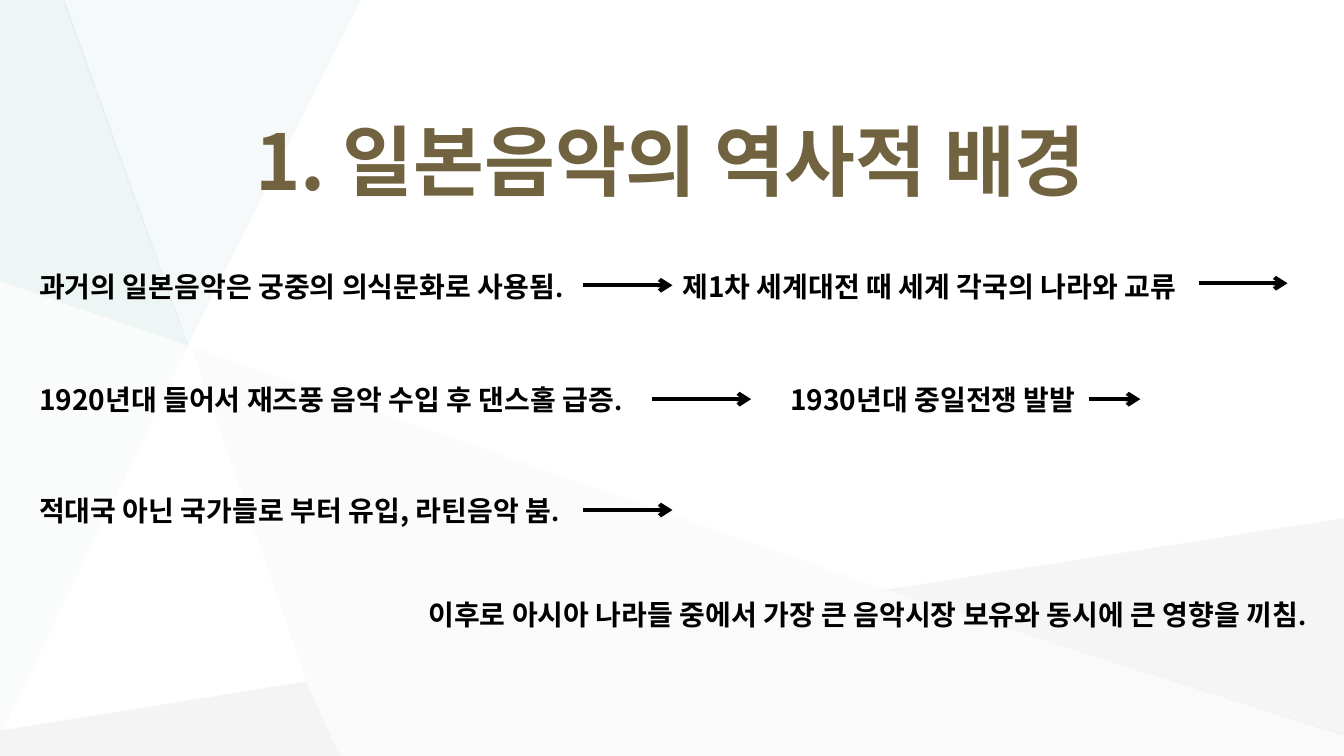
from lxml import etree
from pptx import Presentation
from pptx.dml.color import RGBColor
from pptx.enum.shapes import MSO_CONNECTOR
from pptx.enum.text import MSO_ANCHOR, MSO_AUTO_SIZE, PP_ALIGN
from pptx.oxml.ns import qn
from pptx.util import Inches, Pt

STRAIGHT = MSO_CONNECTOR.STRAIGHT
MIDDLE = MSO_ANCHOR.MIDDLE
GROW = MSO_AUTO_SIZE.SHAPE_TO_FIT_TEXT
LEFT, CENTER = PP_ALIGN.LEFT, PP_ALIGN.CENTER

FONT = "Noto Sans CJK KR"
BLACK, BROWN = "000000", "716340"

# Background facets: colour, opacity in percent, corners
FACETS = [
    ("F3F2F2", 26, [(1.9, 3.44), (3.04, 6.76), (8.79, 5.85)]),
    ("B6B8BA", 15, [(3.04, 6.76), (0, 7.25), (0, 7.5), (3.37, 7.5)]),
    ("E0EDED", 31, [(3.58, 0), (0.62, 0), (1.86, 3.43)]),
    ("C6C8CA", 17, [(13.33, 5.14), (8.79, 5.85), (13.33, 7.3)]),
    ("B6B8BA", 6, [(8.79, 5.85), (3.05, 6.76), (3.37, 7.5),
                   (13.33, 7.5), (13.33, 7.29)]),
    ("C1DBDB", 27, [(0.64, 0), (0, 0), (0, 2.79), (1.87, 3.43)]),
    ("C1DBDB", 8, [(0, 2.79), (0, 7.3), (1.87, 3.43)]),
]

# Events: text, closing mark, left, top, width
EVENTS = [
    ("제1차 세계대전 때 세계 각국의 나라와 교류", "", 6.67, 2.62, 6.46),
    ("과거의 일본음악은 궁중의 의식문화로 사용됨", ".", 0.29, 2.62, 6.22),
    ("1920년대 들어서 재즈풍 음악 수입 후 댄스홀 급증", ".", 0.29, 3.75, 6.91),
    ("1930년대 중일전쟁 발발", "", 7.74, 3.75, 3.64),
    ("적대국 아닌 국가들로 부터 유입, 라틴음악 붐", ".", 0.29, 4.85, 6.22),
    ("이후로 아시아 나라들 중에서 가장 큰 음악시장 보유와 동시에 큰 영향을 끼침",
     ".", 4.15, 5.88, 9.18),
]

# Arrows: start, end, height on the slide
ARROWS = [(11.89, 12.77, 2.81), (5.78, 6.67, 2.83), (6.47, 7.45, 3.96),
          (10.8, 11.31, 3.96), (5.78, 6.67, 5.06)]


def color(value):
    return RGBColor.from_string(value)


def add_facet(page, fill, opacity, corners):
    points = [(Inches(x), Inches(y)) for x, y in corners]
    builder = page.shapes.build_freeform(*points[0])
    builder.add_line_segments(points[1:], close=True)
    facet = builder.convert_to_shape()
    facet.shadow.inherit = False
    facet.line.fill.background()
    facet.fill.solid()
    facet.fill.fore_color.rgb = color(fill)
    tint = next(facet.fill._xPr.iter(qn("a:srgbClr")))
    etree.SubElement(tint, qn("a:alpha"), val=str(opacity * 1000))


def add_text(page, text, left, top, width, height, size, ink, align=LEFT):
    box = page.shapes.add_textbox(Inches(left), Inches(top), Inches(width), Inches(height))
    box.text_frame.word_wrap = True
    para = box.text_frame.paragraphs[0]
    para.alignment = align
    para.add_run().text = text
    font = para.font
    font.name, font.size, font.bold = FONT, Pt(size), True
    font.color.rgb = color(ink)
    # Korean letters take the East Asian font
    etree.SubElement(font._element, qn("a:ea"), typeface=FONT)
    return box


def add_event(page, text, mark, left, top, width):
    box = add_text(page, text, left, top, width, 0.43, 20, BLACK)
    box.text_frame.auto_size = GROW
    if mark:
        span = box.text_frame.paragraphs[0].add_run()
        span.text = mark
        span.font.size = Pt(18)


def add_arrow(page, start, end, y):
    arrow = page.shapes.add_connector(
        STRAIGHT, Inches(start), Inches(y), Inches(end), Inches(y))
    arrow.line.color.rgb = color(BLACK)
    arrow.line.width = Pt(3)
    etree.SubElement(arrow.line._get_or_add_ln(), qn("a:tailEnd"), type="arrow")
    etree.SubElement(arrow._element.spPr, qn("a:effectLst"))


def main():
    deck = Presentation()
    deck.slide_width, deck.slide_height = Inches(13.33), Inches(7.5)
    page = deck.slides.add_slide(deck.slide_layouts[6])

    # Background
    for facet in FACETS:
        add_facet(page, *facet)

    # Title
    title = add_text(page, "1. 일본음악의 역사적 배경", 0.47, 1.07, 12.36, 1.03,
                     55, BROWN, CENTER)
    title.text_frame.vertical_anchor = MIDDLE

    # Timeline
    for event in EVENTS:
        add_event(page, *event)
    for arrow in ARROWS:
        add_arrow(page, *arrow)

    deck.save("out.pptx")


if __name__ == "__main__":
    main()
